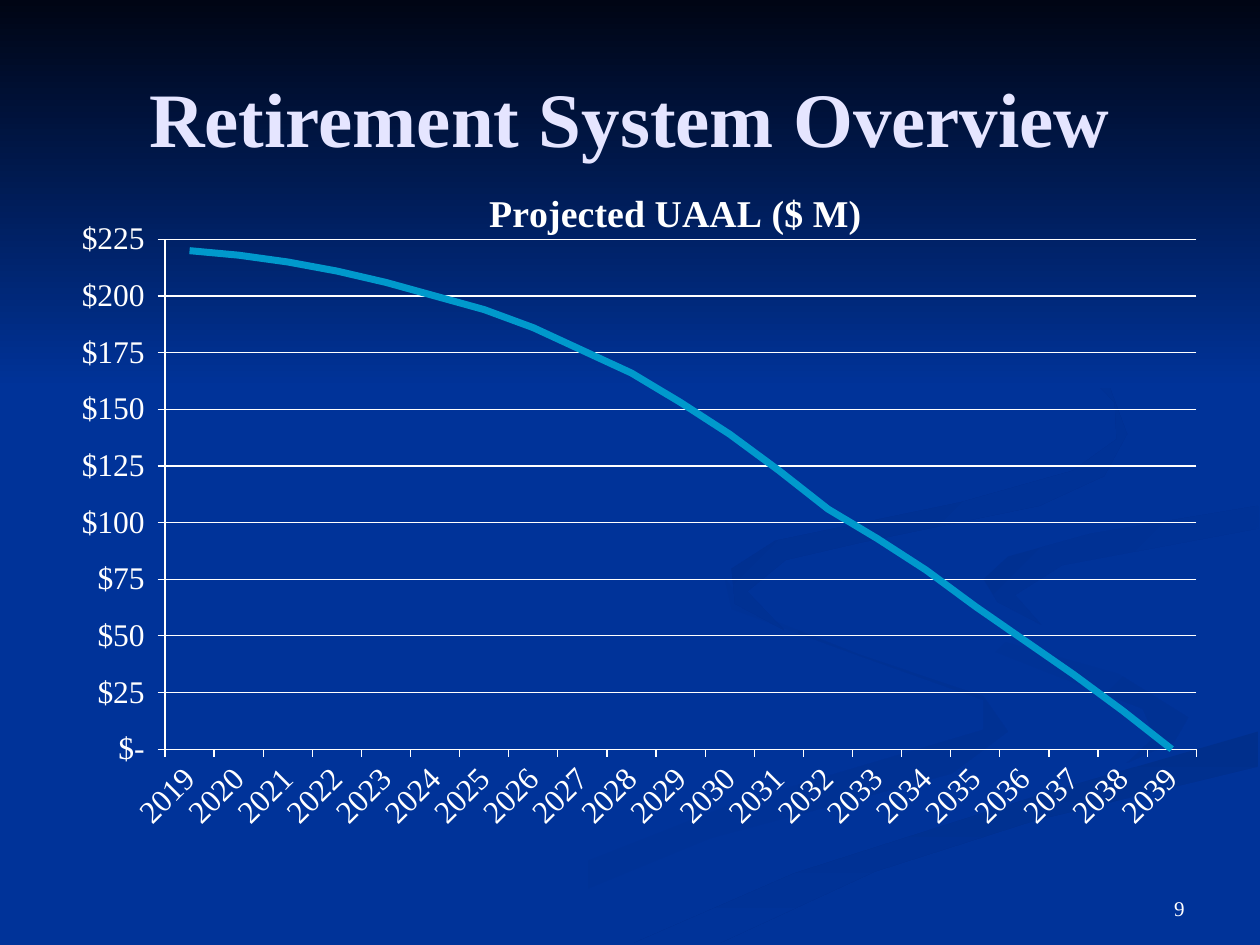
from lxml import etree
from pptx import Presentation
from pptx.chart.data import CategoryChartData
from pptx.dml.color import RGBColor
from pptx.enum.chart import XL_CHART_TYPE, XL_MARKER_STYLE, XL_TICK_MARK
from pptx.enum.shapes import MSO_SHAPE
from pptx.enum.text import MSO_ANCHOR, PP_ALIGN
from pptx.oxml.ns import qn
from pptx.util import Pt

LINE = XL_CHART_TYPE.LINE
NO_MARKER = XL_MARKER_STYLE.NONE
OUTSIDE, NO_TICK = XL_TICK_MARK.OUTSIDE, XL_TICK_MARK.NONE
RECTANGLE = MSO_SHAPE.RECTANGLE
MIDDLE, BOTTOM = MSO_ANCHOR.MIDDLE, MSO_ANCHOR.BOTTOM
CENTER, RIGHT = PP_ALIGN.CENTER, PP_ALIGN.RIGHT
FONT = "Times New Roman"
COLORS = {
    "background": "003399", "night": "000514", "title": "E5E5FF",
    "white": "FFFFFF", "series": "0099CC", "shade": "003193",
    "deep": "002F8C", "mid": "003091", "curl": "002F8E",
}


def add_text(text, box, size, color, bold, align, anchor):
    frame = slide.shapes.add_textbox(*[Pt(length) for length in box]).text_frame
    frame.word_wrap = True
    frame.vertical_anchor = anchor
    paragraph = frame.paragraphs[0]
    paragraph.alignment = align
    run = paragraph.add_run()
    run.text = text
    run.font.name = FONT
    run.font.size = Pt(size)
    run.font.bold = bold
    run.font.color.rgb = RGBColor.from_string(COLORS[color])


def place_chart_part(parent, index, settings):
    for existing in parent.findall(qn("c:layout")):
        parent.remove(existing)
    layout = etree.Element(qn("c:layout"))
    manual = etree.SubElement(layout, qn("c:manualLayout"))
    for tag, value in settings.items():
        etree.SubElement(manual, qn(f"c:{tag}")).set("val", str(value))
    parent.insert(index, layout)


presentation = Presentation()
presentation.slide_width, presentation.slide_height = Pt(720), Pt(540)
slide = presentation.slides.add_slide(presentation.slide_layouts[6])
slide.background.fill.solid()
slide.background.fill.fore_color.rgb = RGBColor.from_string(COLORS["background"])

ribbons = [
    ("background", "shade", 0, [
        (562, 398), (491, 374), (428, 349), (414, 330), (418, 348), (489, 374),
        (562, 400), (562, 417), (417, 460), (216, 539), (260, 539), (406, 479),
        (544, 442), (576, 418)]),
    ("background", "shade", 45, [
        (679, 410), (639, 385), (557, 362), (521, 334), (537, 360), (603, 386),
        (653, 405), (660, 421), (644, 436), (671, 424)]),
    ("deep", "background", 90, [
        (362, 539), (411, 539), (500, 498), (591, 469), (719, 438), (719, 418),
        (598, 453), (454, 499)]),
    ("mid", "background", 45, [
        (562, 331), (570, 344), (595, 357), (580, 340), (607, 323), (719, 302),
        (719, 289), (623, 305), (576, 318)]),
    ("curl", "background", 45, [
        (492, 310), (594, 289), (631, 272), (644, 248), (634, 221), (607, 198),
        (549, 168), (609, 201), (637, 230), (638, 251), (613, 269), (549, 287),
        (443, 309), (418, 325), (420, 345), (448, 360), (427, 338), (449, 320)]),
]
gradient_shapes = []
for start_color, end_color, angle, points in ribbons:
    builder = slide.shapes.build_freeform(*points[0], scale=Pt(1))
    builder.add_line_segments(points[1:], close=True)
    gradient_shapes.append((builder.convert_to_shape(), start_color, end_color, angle))
header = slide.shapes.add_shape(RECTANGLE, Pt(0), Pt(0), Pt(720), Pt(222))
gradient_shapes.append((header, "night", "background", 90))
for shape, start_color, end_color, angle in gradient_shapes:
    shape.shadow.inherit = False
    shape.line.fill.background()
    shape.fill.gradient()
    shape.fill.gradient_angle = (360 - angle) % 360
    for stop, color in zip(shape.fill.gradient_stops, (start_color, end_color)):
        stop.color.rgb = RGBColor.from_string(COLORS[color])

add_text("Retirement System Overview", (36, 21.6, 648, 90), 44, "title", True, CENTER, MIDDLE)

chart_data = CategoryChartData()
chart_data.categories = [str(year) for year in range(2019, 2040)]
chart_data.add_series("Projected UAAL ($ M)", [
    220, 218, 215, 211, 206, 200, 194, 186, 176, 166, 153,
    139, 123, 106, 93, 79, 63, 48, 33, 17, 0])
chart = slide.shapes.add_chart(LINE, Pt(36), Pt(95.76), Pt(648), Pt(410.4), chart_data).chart
chart.has_legend = False
chart.font.name = FONT
chart.font.size = Pt(18)
chart.font.color.rgb = RGBColor.from_string(COLORS["white"])

chart.has_title = True
run = chart.chart_title.text_frame.paragraphs[0].add_run()
run.text = "Projected UAAL ($ M)"
run.font.name = FONT
run.font.size = Pt(21.6)
run.font.bold = True
run.font.color.rgb = RGBColor.from_string(COLORS["white"])
place_chart_part(chart.chart_title._element, 1,
                 {"xMode": "edge", "yMode": "edge", "x": 0.37, "y": 0.02})
place_chart_part(chart._chartSpace.chart.plotArea, 0, {
    "layoutTarget": "inner", "xMode": "edge", "yMode": "edge",
    "x": 0.09, "y": 0.1, "w": 0.91, "h": 0.71})

plot = chart.plots[0]
plot.vary_by_categories = False
series = plot.series[0]
series.smooth = False
series.marker.style = NO_MARKER
series.format.line.width = Pt(4)
series.format.line.color.rgb = RGBColor.from_string(COLORS["series"])

value_axis, category_axis = chart.value_axis, chart.category_axis
value_axis.minimum_scale = 0
value_axis.maximum_scale = 225
value_axis.major_unit = 25
value_axis.has_major_gridlines = True
value_axis.tick_labels.number_format = '"$"#,##0_);;"$-"_)'
value_axis.tick_labels.number_format_is_linked = False
category_axis.tick_labels.font.size = Pt(18)
category_axis._element.txPr.find(qn("a:bodyPr")).set("rot", "-2700000")
for axis in (value_axis, category_axis):
    axis.major_tick_mark = OUTSIDE
    axis.minor_tick_mark = NO_TICK
for item in (value_axis, category_axis, value_axis.major_gridlines):
    item.format.line.width = Pt(0.75)
    item.format.line.color.rgb = RGBColor.from_string(COLORS["white"])

add_text("9", (516, 492, 168, 37.44), 12, "white", False, RIGHT, BOTTOM)

presentation.save("out.pptx")
